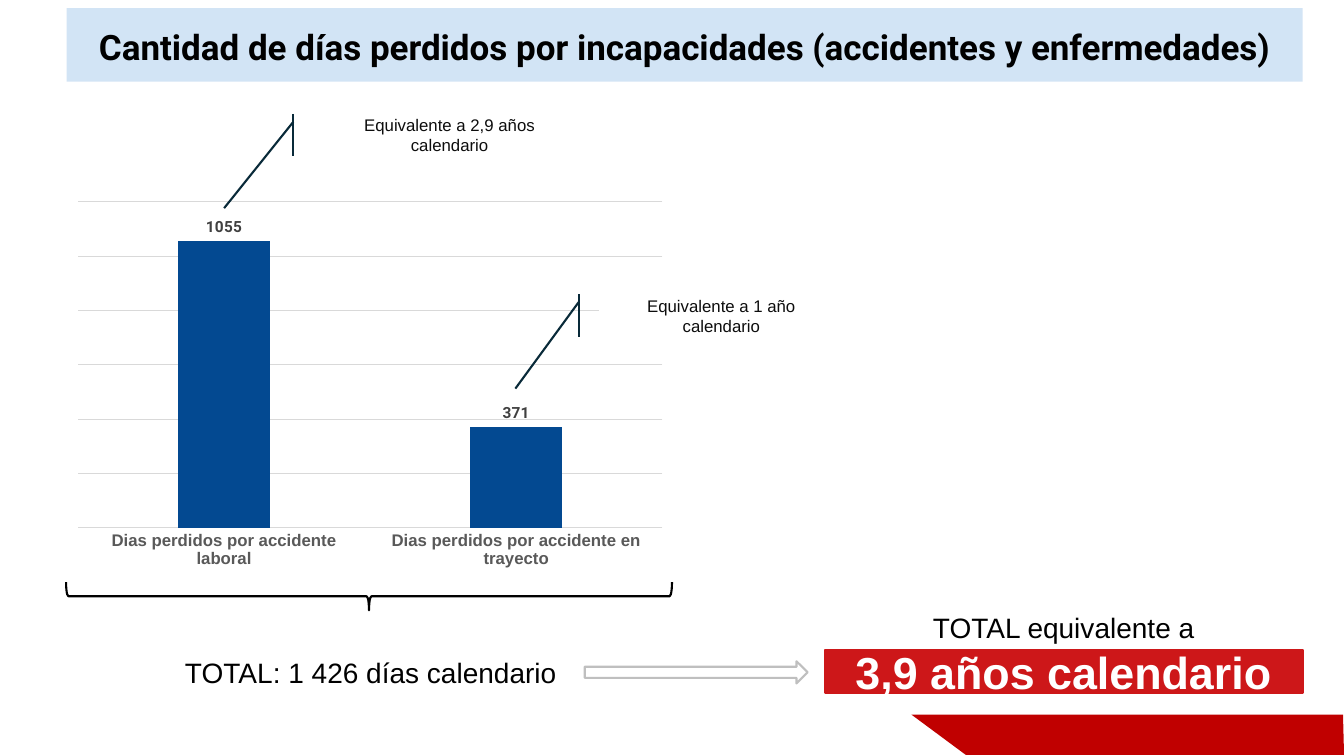
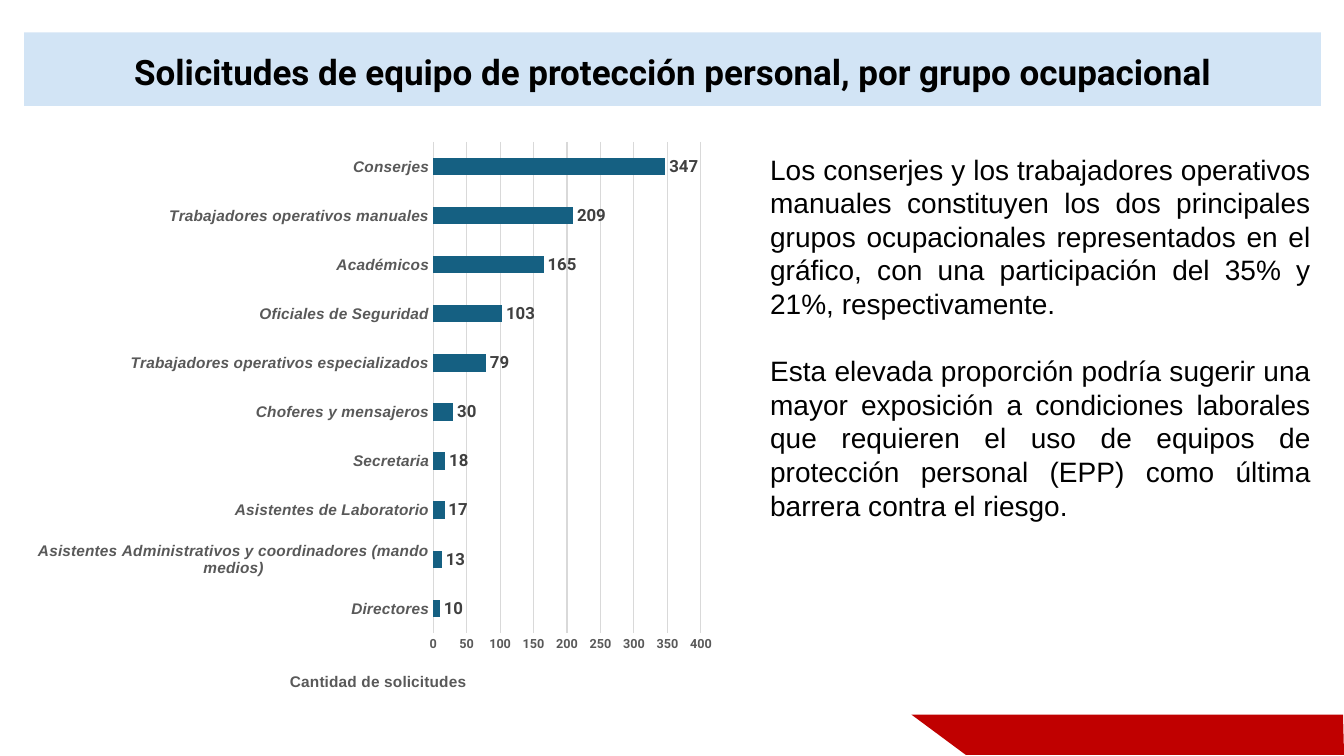
from pptx import Presentation
from pptx.chart.data import CategoryChartData
from pptx.dml.color import RGBColor
from pptx.enum import chart as ch, shapes, text
from pptx.oxml import parse_xml
from pptx.oxml.ns import nsdecls, qn
from pptx.util import Inches, Pt

BLACK, WHITE, GREY = "000000", "FFFFFF", "595959"
RED, BAND, BLUE, TEAL = "CD1719", "C00000", "034991", "156082"
PALE, NAVY, RULE, SILVER = "A6CAEC", "092A39", "D9D9D9", "BFBFBF"
KIND, ALIGN = shapes.MSO_SHAPE, text.PP_ALIGN
CALLOUT = (0.188, -0.083, 2.226, -0.341)


def color(code):
    return RGBColor.from_string(code)


def inches(box):
    return [Inches(n) for n in box]


def style(font, size, code=BLACK, name="Arial", bold=False, italic=False):
    font.size, font.name = Pt(size), name
    font.bold, font.italic = bold, italic
    font.color.rgb = color(code)


def paint(item, code):
    item.fill.solid()
    item.fill.fore_color.rgb = color(code)


def stroke(line, code, width):
    line.color.rgb = color(code)
    line.width = Pt(width)


def write(frame, lines, size, align=ALIGN.CENTER, gap=0, **look):
    frame.word_wrap = True
    for i, words in enumerate(lines):
        par = frame.add_paragraph() if i else frame.paragraphs[0]
        par.text, par.alignment = words, align
        if i:
            par.space_before = Pt(gap)
        style(par.font, size, **look)


def label(slide, box, lines, align=ALIGN.CENTER, gap=0):
    frame = slide.shapes.add_textbox(*inches(box)).text_frame
    write(frame, lines, 20, align, gap)


def draw(slide, kind, box, line, fill=None):
    shape = slide.shapes.add_shape(kind, *inches(box))
    shape.shadow.inherit = False
    if fill:
        paint(shape, fill)
    else:
        shape.fill.background()
    stroke(shape.line, line, 1.5)
    shape.text_frame.vertical_anchor = text.MSO_ANCHOR.MIDDLE
    return shape


def callout(slide, box, words):
    shape = draw(slide, KIND.LINE_CALLOUT_1_ACCENT_BAR, box, NAVY, WHITE)
    for i, value in enumerate(CALLOUT):
        shape.adjustments[i] = value
    write(shape.text_frame, [words], 12, code="0D0D0D")


def head(slide, box, words):
    """Turn the title placeholder into a rounded, half-transparent bar."""
    title = slide.shapes.title
    title.left, title.top, title.width, title.height = inches(box)
    title.element.spPr.append(parse_xml(
        f'<a:prstGeom {nsdecls("a")} prst="roundRect"><a:avLst/></a:prstGeom>'))
    paint(title, PALE)
    tint = title.element.spPr.find(".//" + qn("a:srgbClr"))
    tint.append(parse_xml(f'<a:alpha {nsdecls("a")} val="50000"/>'))
    frame = title.text_frame
    frame.auto_size = text.MSO_AUTO_SIZE.NONE
    frame.vertical_anchor = text.MSO_ANCHOR.BOTTOM
    frame.margin_left = frame.margin_right = Inches(0.13)
    frame.margin_top = frame.margin_bottom = Inches(0.13)
    write(frame, [words], 25, name="Roboto", bold=True)
    frame.paragraphs[0].line_spacing = 0.9


def corner(slide, layout):
    """Draw the red corner band and hand it over to the layout."""
    pen = slide.shapes.build_freeform(Inches(13.32), Inches(7.09))
    spots = [(9.04, 7.09), (9.58, 7.49), (13.33, 7.49)]
    pen.add_line_segments([inches(spot) for spot in spots], close=True)
    band = pen.convert_to_shape()
    band.shadow.inherit = False
    paint(band, BAND)
    band.line.fill.background()
    layout.shapes.element.append(band.element)


def place(host, **parts):
    """Fix the layout of a plot area or a chart title, as shares of the chart."""
    spot = host.find(qn("c:layout"))
    if spot is not None:
        host.replace(spot, new := parse_xml(f'<c:layout {nsdecls("c")}/>'))
    else:
        new = parse_xml(f'<c:layout {nsdecls("c")}/>')
        host.insert(0, new)
    tags = '<c:layoutTarget val="inner"/>' if "w" in parts else ""
    tags += '<c:xMode val="edge"/><c:yMode val="edge"/>'
    tags += "".join(f'<c:{key} val="{val}"/>' for key, val in parts.items())
    new.append(parse_xml(
        f'<c:manualLayout {nsdecls("c")}>{tags}</c:manualLayout>'))


def bars(slide, kind, box, rows, code, gap, area, top, step, size):
    data = CategoryChartData(number_format="0")
    data.categories = list(rows)
    data.add_series("Series 1", list(rows.values()))
    chart = slide.shapes.add_chart(kind, *inches(box), data).chart
    chart.has_legend = chart.has_title = False
    style(chart.font, 10, name="Roboto")
    place(chart.element.find(".//" + qn("c:plotArea")),
          **dict(zip("xywh", area)))

    plot = chart.plots[0]
    plot.vary_by_categories = False
    plot.gap_width = gap
    paint(plot.series[0].format, code)
    plot.has_data_labels = True
    tags = plot.data_labels
    tags.show_value = True
    tags.position = ch.XL_LABEL_POSITION.OUTSIDE_END
    style(tags.font, size, "404040", "Roboto", True)

    names, axis = chart.category_axis, chart.value_axis
    names.major_tick_mark = axis.major_tick_mark = ch.XL_TICK_MARK.NONE
    stroke(names.format.line, RULE, 0.75)
    axis.minimum_scale, axis.maximum_scale, axis.major_unit = 0, top, step
    axis.has_major_gridlines = True
    stroke(axis.major_gridlines.format.line, RULE, 0.75)
    axis.format.line.fill.background()
    return chart


def days(slide):
    head(slide, (0.66, 0.08, 12.26, 0.73),
         "Cantidad de días perdidos por incapacidades (accidentes y enfermedades)")
    rows = {"Dias perdidos por accidente laboral": 1055,
            "Dias perdidos por accidente en trayecto": 371}
    chart = bars(slide, ch.XL_CHART_TYPE.COLUMN_CLUSTERED, (0, 1.2, 6.67, 4.86),
                 rows, BLUE, 219, (0.116, 0.165, 0.869, 0.666), 1200, 200, 11)
    chart.plots[0].overlap = -27
    chart.value_axis.visible = False
    style(chart.category_axis.tick_labels.font, 12, GREY, bold=True)

    brace = draw(slide, KIND.LEFT_BRACE, (3.52, 2.91, 0.28, 6.01), BLACK)
    brace.rotation = 270
    callout(slide, (5.94, 2.92, 2.43, 0.42), "Equivalente a 1 año calendario")
    callout(slide, (3.13, 1.13, 2.66, 0.42), "Equivalente a 2,9 años calendario")

    label(slide, (1.29, 6.45, 4.33, 0.44), ["TOTAL: 1 426 días calendario"],
          ALIGN.RIGHT)
    draw(slide, KIND.RIGHT_ARROW, (5.8, 6.56, 2.21, 0.22), SILVER, WHITE)
    label(slide, (8.18, 6.01, 4.74, 0.44), ["TOTAL equivalente a"])
    total = draw(slide, KIND.RECTANGLE, (8.18, 6.45, 4.74, 0.42), RED, RED)
    write(total.text_frame, ["3,9 años calendario"], 32, code=WHITE, bold=True)


def gear(slide):
    head(slide, (0.24, 0.32, 12.86, 0.73),
         "Solicitudes de equipo de protección personal, por grupo ocupacional")
    rows = {
        "Directores": 10,
        "Asistentes Administrativos y coordinadores (mando medios)": 13,
        "Asistentes de Laboratorio": 17,
        "Secretaria": 18,
        "Choferes y mensajeros": 30,
        "Trabajadores operativos especializados": 79,
        "Oficiales de Seguridad": 103,
        "Académicos": 165,
        "Trabajadores operativos manuales": 209,
        "Conserjes": 347,
    }
    chart = bars(slide, ch.XL_CHART_TYPE.BAR_CLUSTERED, (0.24, 1.3, 6.97, 5.73),
                 rows, TEAL, 182, (0.582, 0.019, 0.381, 0.85), 400, 50, 12)
    style(chart.category_axis.tick_labels.font, 11, GREY, bold=True, italic=True)
    axis = chart.value_axis
    style(axis.tick_labels.font, 9, GREY, "Roboto", True)
    write_axis = axis.axis_title.text_frame.paragraphs[0]
    write_axis.text = "Cantidad de solicitudes"
    style(write_axis.font, 11, GREY, bold=True)
    place(axis.axis_title.element, x=0.374, y=0.93)

    label(slide, (7.54, 1.46, 5.56, 3.8), [
        "Los conserjes y los trabajadores operativos manuales constituyen los "
        "dos principales grupos ocupacionales representados en el gráfico, con "
        "una participación del 35% y 21%, respectivamente.",
        "Esta elevada proporción podría sugerir una mayor exposición a "
        "condiciones laborales que requieren el uso de equipos de protección "
        "personal (EPP) como última barrera contra el riesgo.",
    ], ALIGN.JUSTIFY, 24)


def main():
    deck = Presentation()
    deck.slide_width, deck.slide_height = Inches(13.33), Inches(7.5)
    layout = deck.slide_layouts.get_by_name("Title Only")
    first, second = [deck.slides.add_slide(layout) for _ in range(2)]
    corner(first, layout)
    days(first)
    gear(second)
    deck.save("out.pptx")


if __name__ == "__main__":
    main()
